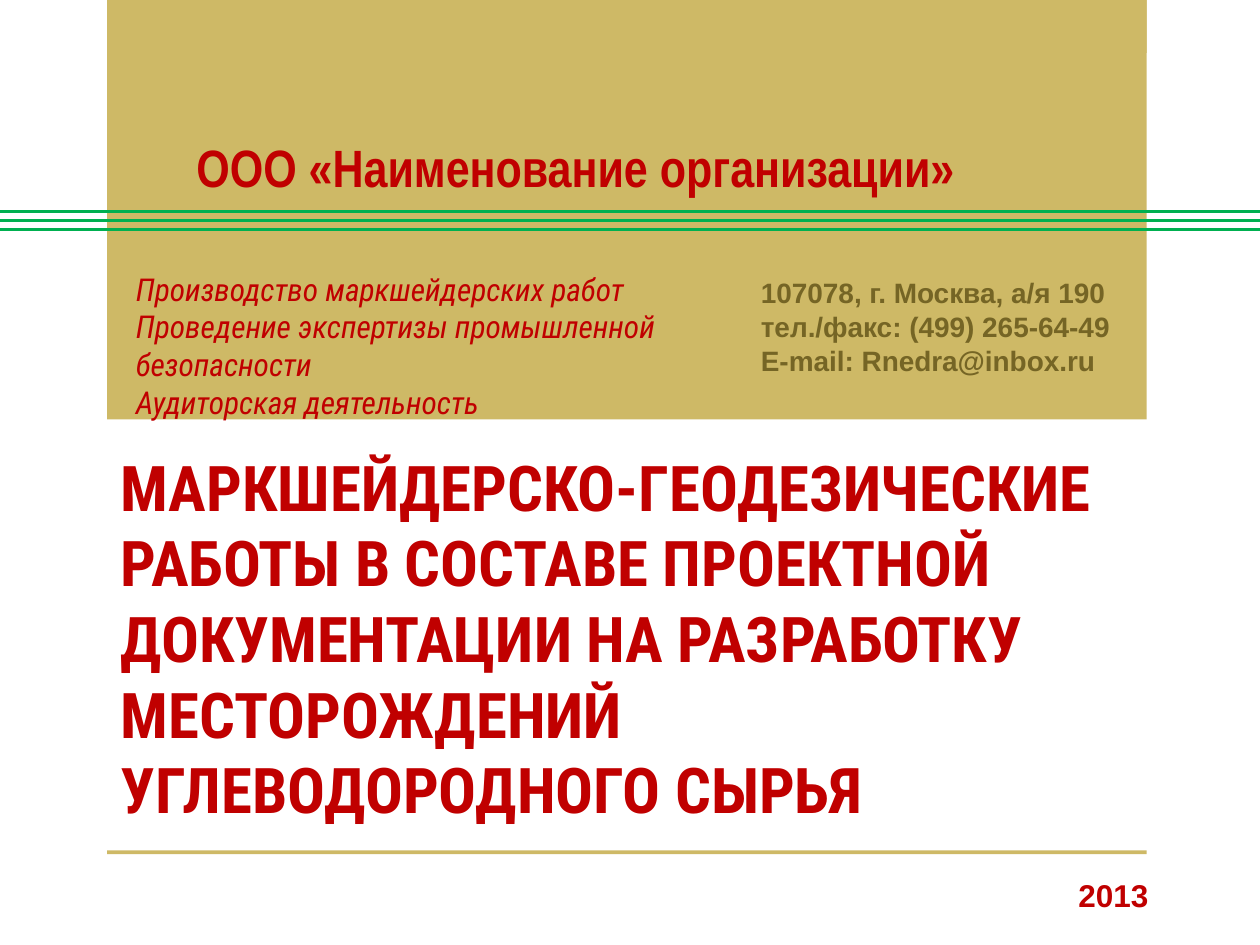
"""Build the title slide of a mine surveying presentation."""
from pptx import Presentation
from pptx.dml.color import RGBColor
from pptx.enum.shapes import MSO_CONNECTOR, MSO_SHAPE
from pptx.enum.text import MSO_ANCHOR, PP_ALIGN
from pptx.oxml.ns import qn
from pptx.util import Pt
from lxml import etree

RECTANGLE = MSO_SHAPE.RECTANGLE
STRAIGHT = MSO_CONNECTOR.STRAIGHT
TOP, BOTTOM = MSO_ANCHOR.TOP, MSO_ANCHOR.BOTTOM
LEFT, JUSTIFY = PP_ALIGN.LEFT, PP_ALIGN.JUSTIFY

THEME = {
    "sand": RGBColor.from_string("CEB966"),
    "olive": RGBColor.from_string("756525"),
    "red": RGBColor.from_string("C00000"),
    "green": RGBColor.from_string("00B050"),
    "company": ("Arial Narrow", 30),
    "topic": ("Roboto Condensed", 36),
    "contact": ("Arial", 16),
    "year": ("Arial", 18),
    "service": ("Roboto Condensed", 18),
}

SLIDE_WIDTH, SLIDE_HEIGHT = 720, 540
BAND_LEFT, BAND_WIDTH = 61.2, 594
BANDS = [(0, 30.24), (0, 239.76), (486, 2.16)]
RULE_TOP, RULE_GAP, RULE_COUNT, RULE_WEIGHT = 120.96, 5.04, 3, 2

TEXTS = [
    {"style": "company", "at": (105.12, 77.04, 544.32, 39.6), "anchor": BOTTOM,
     "lines": ["ООО «Наименование организации»"]},
    {"style": "topic", "at": (61.92, 252.72, 592.56, 221.04),
     "lines": ["МАРКШЕЙДЕРСКО-ГЕОДЕЗИЧЕСКИЕ РАБОТЫ В СОСТАВЕ ПРОЕКТНОЙ "
               "ДОКУМЕНТАЦИИ НА РАЗРАБОТКУ МЕСТОРОЖДЕНИЙ "
               "УГЛЕВОДОРОДНОГО СЫРЬЯ"]},
    {"style": "contact", "at": (427.68, 154.08, 216.72, 65.52),
     "color": "olive", "align": JUSTIFY, "wrap": False,
     "lines": ["107078, г. Москва, а/я 190",
               "тел./факс: (499) 265-64-49",
               "E-mail: Rnedra@inbox.ru"]},
    {"style": "year", "at": (609.12, 496.8, 54.72, 28.8), "wrap": False,
     "lines": ["2013"]},
    {"style": "service", "at": (70.56, 150.48, 356.4, 72.72),
     "bold": False, "italic": True,
     "lines": ["Производство маркшейдерских работ",
               "Проведение экспертизы промышленной безопасности",
               "Аудиторская деятельность"]},
]


def add_band(page, top, height):
    """Add one sand-coloured band."""
    band = page.shapes.add_shape(
        RECTANGLE, Pt(BAND_LEFT), Pt(top), Pt(BAND_WIDTH), Pt(height))
    band.shadow.inherit = False
    band.fill.solid()
    band.fill.fore_color.rgb = THEME["sand"]
    band.line.fill.background()


def add_rule(page, top):
    """Add one green line across the page."""
    rule = page.shapes.add_connector(
        STRAIGHT, Pt(0), Pt(top), Pt(SLIDE_WIDTH), Pt(top))
    rule.line.color.rgb = THEME["green"]
    rule.line.width = Pt(RULE_WEIGHT)
    etree.SubElement(rule._element.spPr, qn("a:effectLst"))


def add_text(page, style, at, lines, color="red", anchor=TOP, align=LEFT,
             wrap=True, bold=True, italic=False):
    """Add a text box with one paragraph per line."""
    box = page.shapes.add_textbox(*map(Pt, at))
    frame = box.text_frame
    frame.word_wrap = wrap
    frame.vertical_anchor = anchor
    frame.text = "\n".join(lines)
    name, size = THEME[style]
    for paragraph in frame.paragraphs:
        paragraph.alignment = align
        font = paragraph.font
        font.name = name
        font.size = Pt(size)
        font.bold = bold
        font.italic = italic
        font.color.rgb = THEME[color]


def main():
    """Build and save the deck."""
    deck = Presentation()
    deck.slide_width, deck.slide_height = Pt(SLIDE_WIDTH), Pt(SLIDE_HEIGHT)
    page = deck.slides.add_slide(deck.slide_layouts[6])
    for top, height in BANDS:
        add_band(page, top, height)
    for index in range(RULE_COUNT):
        add_rule(page, RULE_TOP + index * RULE_GAP)
    for text in TEXTS:
        add_text(page, **text)
    deck.save("out.pptx")


if __name__ == "__main__":
    main()
